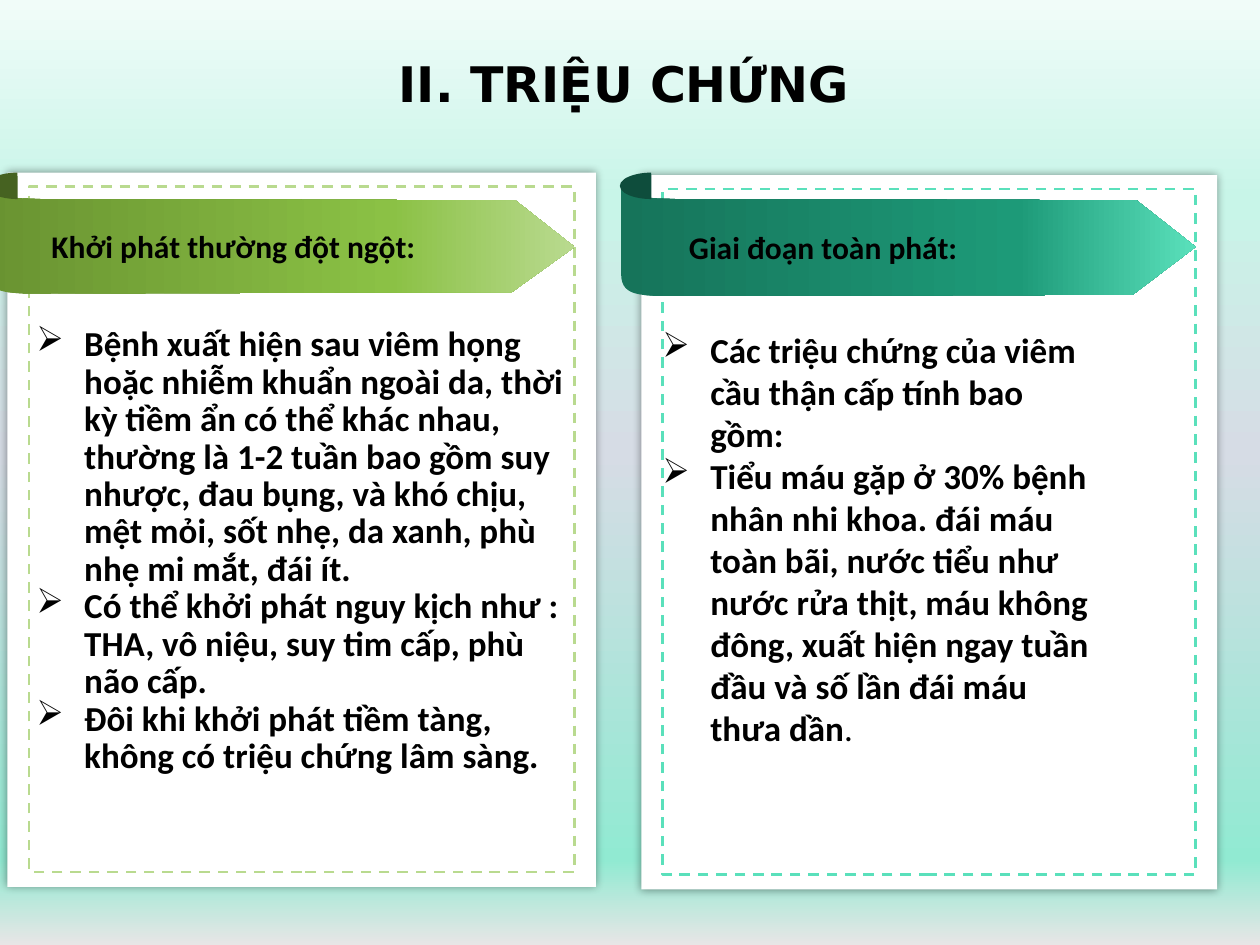
from lxml import etree
from pptx import Presentation, util as u
from pptx.dml.color import RGBColor
from pptx.enum import dml, shapes, text
from pptx.oxml import ns

PX = 9144  # 100 px to the inch
hue = RGBColor.from_string
BLACK = "000000"


def grad(props, stops, angle):
    """Put a linear gradient in place of the solid fill in props."""
    new = etree.Element(ns.qn("a:gradFill"), rotWithShape="1")
    row = etree.SubElement(new, ns.qn("a:gsLst"))
    for pos, tone in stops:
        stop = etree.SubElement(row, ns.qn("a:gs"), pos=str(pos * 1000))
        etree.SubElement(stop, ns.qn("a:srgbClr"), val=tone)
    etree.SubElement(new, ns.qn("a:lin"), ang=str(angle * 60000), scaled="0")
    props.replace(props.find(ns.qn("a:solidFill")), new)


def write(box, paras, size, font="Calibri", wrap=True, mark=False, lead=None, top=False):
    """Add a text box; each paragraph is a list of (words, bold) runs."""
    frame = slide.shapes.add_textbox(*[n * PX for n in box]).text_frame
    frame.word_wrap = wrap
    frame.vertical_anchor = text.MSO_ANCHOR.TOP if top else text.MSO_ANCHOR.MIDDLE
    for i, runs in enumerate(paras):
        para = frame.add_paragraph() if i else frame.paragraphs[0]
        if not wrap:
            para.alignment = text.PP_ALIGN.CENTER
        if mark:
            prop = para._p.get_or_add_pPr()
            prop.set("marL", str(38 * PX))
            prop.set("indent", str(-38 * PX))
            tint = etree.SubElement(prop, ns.qn("a:buClr"))
            etree.SubElement(tint, ns.qn("a:srgbClr"), val=BLACK)
            etree.SubElement(prop, ns.qn("a:buChar"), char="➢")
        if lead:
            para.line_spacing = u.Pt(lead)
        for words, bold in runs:
            run = para.add_run()
            run.text = words
            run.font.name, run.font.size, run.font.bold = font, u.Pt(size), bold
            run.font.color.rgb = hue(BLACK)


deck = Presentation()
deck.slide_width, deck.slide_height = 1000 * PX, 750 * PX
slide = deck.slides.add_slide(deck.slide_layouts[6])

# Background
slide.background.fill.solid()
grad(slide._element.find(".//" + ns.qn("p:bgPr")),
     [(0, "F1FCF9"), (21, "C8F5E8"), (48, "D6DCE5"), (91, "91EAD2"), (100, "E7E6E6")], 90)

# Title
write((294, 37, 402, 57), [[("II. TRIỆU CHỨNG", True)]], 28, "DejaVu Sans", wrap=False)

# Cards: left, top, width, ribbon left, ribbon foot, dark, deep, mid, light
cards = [
    (6, 137, 467, -10, 233, "466221", "699331", "8BC145", "B9DA8F"),
    (509, 139, 457, 493, 235, "0E4D3C", "16745A", "1D9A78", "5AE0BB"),
]
for left, top, wide, edge, foot, dark, deep, mid, light in cards:
    # Sheet with soft shadow
    sheet = slide.shapes.add_shape(shapes.MSO_SHAPE.RECTANGLE,
                                   left * PX, top * PX, wide * PX, 567 * PX)
    sheet.fill.solid()
    sheet.fill.fore_color.rgb = hue("FFFFFF")
    sheet.line.fill.background()
    sheet.shadow.inherit = False
    glow = etree.SubElement(sheet._element.spPr.find(ns.qn("a:effectLst")),
                            ns.qn("a:outerShdw"), blurRad=str(u.Pt(5)), dist="0",
                            dir="0", algn="ctr", rotWithShape="0")
    tone = etree.SubElement(glow, ns.qn("a:srgbClr"), val=BLACK)
    etree.SubElement(tone, ns.qn("a:alpha"), val="40000")

    # Dashed frame
    frame = slide.shapes.add_shape(shapes.MSO_SHAPE.RECTANGLE, (left + 17) * PX,
                                   (top + 11) * PX, (wide - 34) * PX, 544 * PX)
    frame.fill.background()
    frame.line.color.rgb = hue(light)
    frame.line.width = u.Pt(1.5)
    frame.line.dash_style = dml.MSO_LINE.DASH
    frame.shadow.inherit = False

    # Arrow ribbon, its two bends sampled as cubic curves
    tip = left + wide - 17
    bends = [
        [(edge + 43, 158), (edge + 28, 157), (edge + 4, 159), (edge, 145)],
        [(edge, foot - 18), (edge, foot - 2), (edge + 11, foot - 1), (edge + 29, foot)],
    ]
    dots = [(tip - 50, foot - 1), (tip, 196), (tip - 47, 159)]
    for bend in bends:
        for step in range(13):
            t = step / 12
            mix = ((1 - t) ** 3, 3 * t * (1 - t) ** 2, 3 * t * t * (1 - t), t ** 3)
            dots.append(tuple(sum(m * p[k] for m, p in zip(mix, bend)) for k in (0, 1)))
    pen = slide.shapes.build_freeform(*[round(n * PX) for n in dots[0]], scale=1.0)
    pen.add_line_segments([(round(x * PX), round(y * PX)) for x, y in dots[1:]])
    band = pen.convert_to_shape()
    band.fill.solid()
    grad(band._element.spPr, [(0, deep), (69, mid), (100, light)], 0)
    band.line.fill.background()
    band.shadow.inherit = False

    # Curled end of the ribbon
    curl = slide.shapes.add_shape(shapes.MSO_SHAPE.PIE, (edge - 1) * PX, 137 * PX,
                                  50 * PX, 21 * PX)
    curl.adjustments[0], curl.adjustments[1] = 54.3, 162
    curl._element.spPr.find(ns.qn("a:xfrm")).set("flipV", "1")
    curl.fill.solid()
    curl.fill.fore_color.rgb = hue(dark)
    curl.line.fill.background()
    curl.shadow.inherit = False

# Body text
write((19, 254, 442, 422), [
    [("Bệnh xuất hiện sau viêm họng hoặc nhiễm khuẩn ngoài da, thời kỳ tiềm ẩn có thể "
      "khác nhau, thường là 1-2 tuần bao gồm suy nhược, đau bụng, và khó chịu, mệt mỏi, "
      "sốt nhẹ, da xanh, phù nhẹ mi mắt, đái ít.", True)],
    [("Có thể khởi phát nguy kịch như : THA, vô niệu, suy tim cấp, phù não cấp.", True)],
    [("Đôi khi khởi phát tiềm tàng, không có triệu chứng lâm sàng.", True)],
], 20, mark=True, lead=21.4, top=True)
write((516, 254, 366, 347), [
    [("Các triệu chứng của viêm cầu thận cấp tính bao gồm:", True)],
    [("Tiểu máu gặp ở 30% bệnh nhân nhi khoa. đái máu toàn bãi, nước tiểu như nước rửa "
      "thịt, máu không đông, xuất hiện ngay tuần đầu và số lần đái máu thưa dần", True),
     (".", False)],
], 20, mark=True)

# Ribbon headings
write((31, 175, 478, 40), [[("Khởi phát thường đột ngột:", True)]], 18)
write((537, 176, 353, 40), [[("Giai đoạn toàn phát:", True)]], 18)

deck.save("out.pptx")
